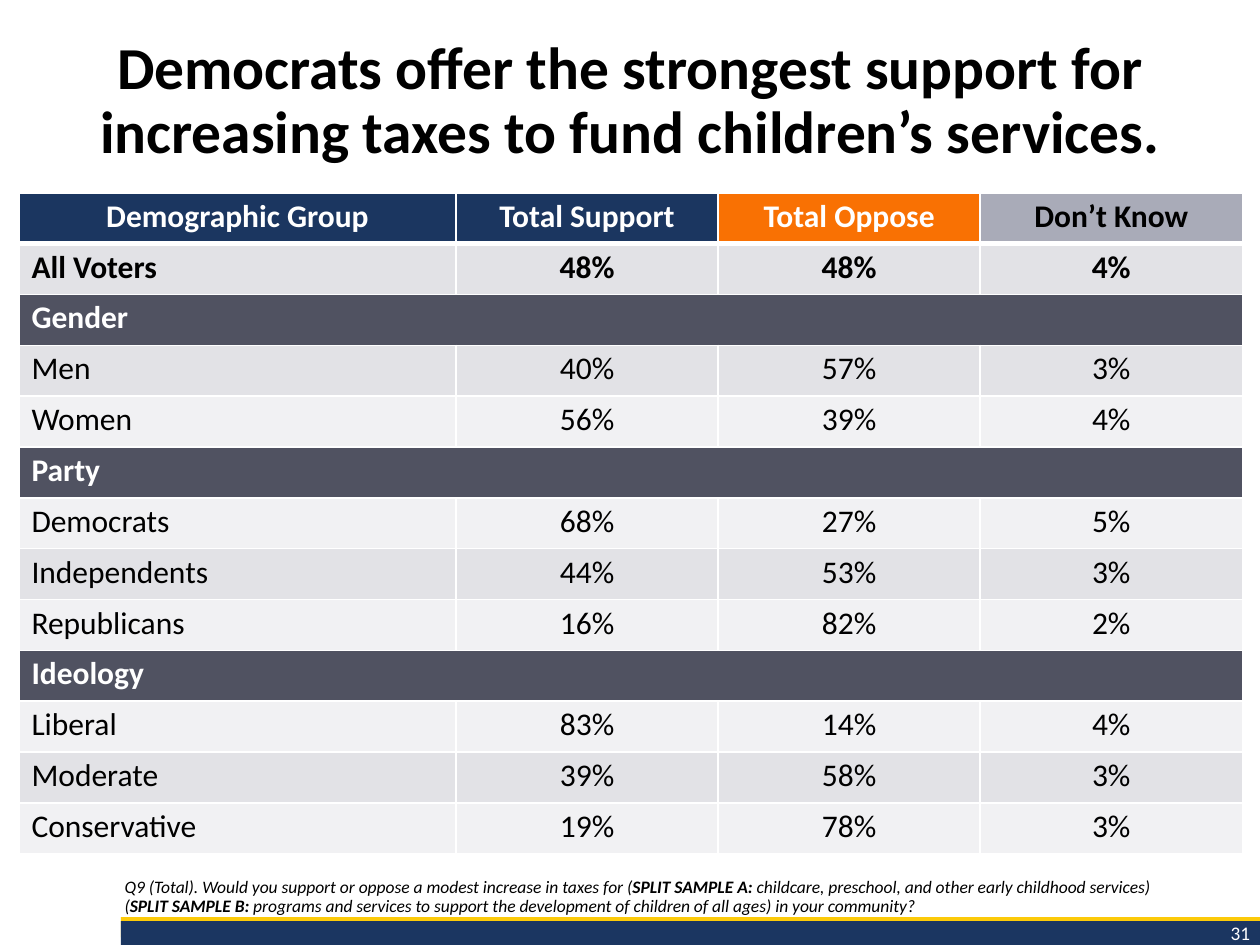
from dataclasses import dataclass
from typing import Any

from lxml.etree import SubElement
from pptx import Presentation
from pptx.dml.color import RGBColor
from pptx.enum.shapes import MSO_SHAPE
from pptx.enum.text import MSO_ANCHOR, PP_ALIGN
from pptx.oxml.ns import qn
from pptx.util import Inches, Pt

FONT = "Calibri"
BLACK, WHITE, NAVY, GOLD = "000000", "FFFFFF", "1B3661", "FCCA09"
SLATE = "505261"
BANDS = ("F1F1F3", "E2E2E6")
COLUMN_WIDTHS = (3.47, 2.08, 2.08, 2.08)
TABLE_HEIGHT = 5.25


@dataclass(frozen=True)
class Box:
    left: float
    top: float
    width: float
    height: float

    def lengths(self) -> tuple[int, ...]:
        return tuple(map(Inches, (self.left, self.top, self.width, self.height)))


@dataclass(frozen=True)
class Heading:
    label: str
    fill: str
    color: str = WHITE


@dataclass(frozen=True)
class Group:
    label: str
    shares: tuple[int, ...] = ()
    bold: bool = False


HEADINGS = (
    Heading("Demographic Group", "1B3660"),
    Heading("Total Support", "1B3660"),
    Heading("Total Oppose", "F97103"),
    Heading("Don’t Know", "A9ABB8", BLACK),
)
GROUPS = (
    Group("All Voters", (48, 48, 4), bold=True),
    Group("Gender"),
    Group("Men", (40, 57, 3)),
    Group("Women", (56, 39, 4)),
    Group("Party"),
    Group("Democrats", (68, 27, 5)),
    Group("Independents", (44, 53, 3)),
    Group("Republicans", (16, 82, 2)),
    Group("Ideology"),
    Group("Liberal", (83, 14, 4)),
    Group("Moderate", (39, 58, 3)),
    Group("Conservative", (19, 78, 3)),
)
QUESTION_LINES = (
    (
        ("Q9 (Total). Would you support or oppose a modest increase in taxes for (", False),
        ("SPLIT SAMPLE A:", True),
        (" childcare, preschool, and other early childhood services) ", False),
    ),
    (
        ("(", False),
        ("SPLIT SAMPLE B:", True),
        (" programs and services to support the development of children of all ages)"
         " in your community?", False),
    ),
)


def rgb(color: str) -> RGBColor:
    return RGBColor.from_string(color)


def add_run(paragraph: Any, text: str, size: float, color: str = BLACK, **style: bool) -> None:
    run = paragraph.add_run()
    run.text = text
    for name, value in {"name": FONT, "size": Pt(size), **style}.items():
        setattr(run.font, name, value)
    run.font.color.rgb = rgb(color)


def add_text_box(slide: Any, box: Box, anchor: MSO_ANCHOR, **layout: Any) -> Any:
    """Add an empty text box and return its first paragraph."""
    frame = slide.shapes.add_textbox(*box.lengths()).text_frame
    frame.word_wrap = True
    frame.vertical_anchor = anchor
    paragraph = frame.paragraphs[0]
    for name, value in layout.items():
        setattr(paragraph, name, value)
    return paragraph


def add_bar(slide: Any, box: Box, color: str) -> None:
    bar = slide.shapes.add_shape(MSO_SHAPE.RECTANGLE, *box.lengths())
    bar.shadow.inherit = False
    bar.fill.solid()
    bar.fill.fore_color.rgb = rgb(color)
    bar.line.fill.background()


def format_cell(cell: Any, fill: str, top: float = 1, bottom: float = 1) -> None:
    """Draw white borders of the given point widths, then the fill."""
    properties = cell._tc.get_or_add_tcPr()
    for side, width in {"L": 1, "R": 1, "T": top, "B": bottom}.items():
        border = SubElement(properties, qn(f"a:ln{side}"), w=str(Pt(width)))
        SubElement(SubElement(border, qn("a:solidFill")), qn("a:srgbClr"), val=WHITE)
    cell.fill.solid()
    cell.fill.fore_color.rgb = rgb(fill)
    cell.vertical_anchor = MSO_ANCHOR.MIDDLE


def write_cell(cell: Any, text: str, color: str, bold: bool, align: PP_ALIGN) -> None:
    paragraph = cell.text_frame.paragraphs[0]
    paragraph.alignment = align
    paragraph.line_spacing = Pt(20)
    add_run(paragraph, text, 18, color, bold=bold)


def add_support_table(slide: Any, box: Box) -> None:
    row_count = len(GROUPS) + 1
    table = slide.shapes.add_table(row_count, len(HEADINGS), *box.lengths()).table
    table.horz_banding = False
    for column, width in zip(table.columns, COLUMN_WIDTHS):
        column.width = Inches(width)
    for row in table.rows:
        row.height = Inches(box.height / row_count)

    for column, heading in enumerate(HEADINGS):
        cell = table.cell(0, column)
        format_cell(cell, heading.fill, bottom=3)
        write_cell(cell, heading.label, heading.color, True, PP_ALIGN.CENTER)

    for row, group in enumerate(GROUPS, start=1):
        is_section = not group.shares
        for column in range(len(HEADINGS)):
            format_cell(table.cell(row, column), SLATE if is_section else BANDS[row % 2],
                        top=3 if row == 1 else 1)
        if is_section:
            table.cell(row, 0).merge(table.cell(row, len(HEADINGS) - 1))
        write_cell(table.cell(row, 0), group.label, WHITE if is_section else BLACK,
                   is_section or group.bold, PP_ALIGN.LEFT)
        for column, share in enumerate(group.shares, start=1):
            write_cell(table.cell(row, column), f"{share}%", BLACK, group.bold, PP_ALIGN.CENTER)


def add_question(slide: Any, box: Box) -> None:
    paragraph = add_text_box(slide, box, MSO_ANCHOR.BOTTOM, line_spacing=0.9)
    for index, line in enumerate(QUESTION_LINES):
        if index:
            paragraph.add_line_break()
        for text, bold in line:
            add_run(paragraph, text, 10, bold=bold, italic=True)


def main() -> None:
    presentation = Presentation()
    presentation.slide_width, presentation.slide_height = Inches(10), Inches(7.5)
    slide = presentation.slides.add_slide(presentation.slide_layouts[6])

    add_bar(slide, Box(0.96, 7.28, 9.04, 0.16), GOLD)
    add_bar(slide, Box(0.96, 7.31, 9.04, 0.19), NAVY)
    page_number = add_text_box(slide, Box(8.54, 7.26, 1.48, 0.29), MSO_ANCHOR.TOP,
                               alignment=PP_ALIGN.RIGHT)
    add_run(page_number, "31", 11, WHITE)

    title = add_text_box(slide, Box(0, 0.2, 10, 1.22), MSO_ANCHOR.MIDDLE,
                         alignment=PP_ALIGN.CENTER, line_spacing=0.9)
    add_run(title, "Democrats offer the strongest support for increasing taxes"
                   " to fund children’s services.", 34, bold=True)

    add_question(slide, Box(0.89, 6.78, 9.09, 0.54))
    add_support_table(slide, Box(0.15, 1.53, sum(COLUMN_WIDTHS), TABLE_HEIGHT))
    presentation.save("out.pptx")


if __name__ == "__main__":
    main()
